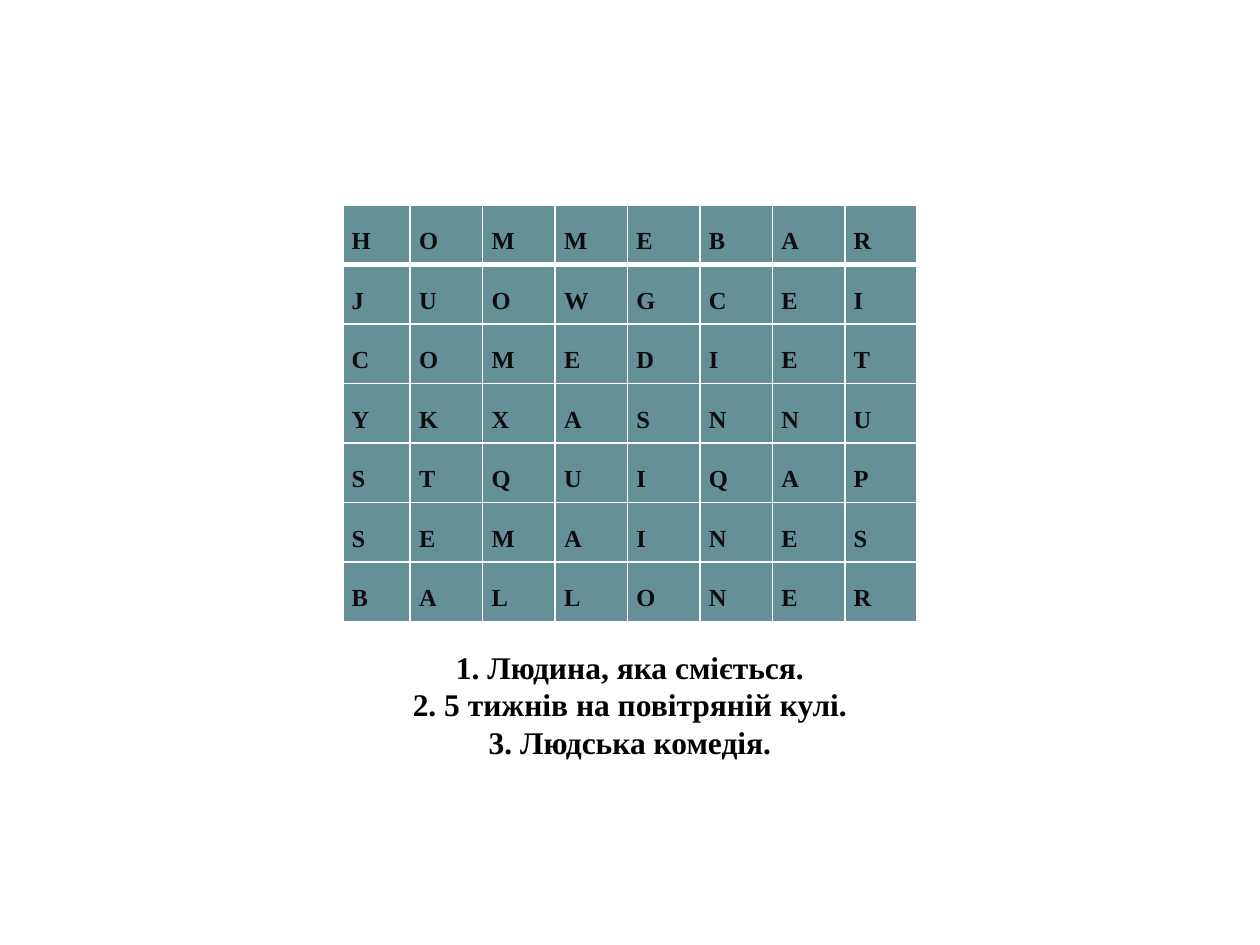
import pptx
import pptx.util
import pptx.dml.color
import pptx.enum.text
from lxml import etree
from pptx.oxml.ns import qn
from pptx.util import Cm

ALIGN = pptx.enum.text.PP_ALIGN
ANCHOR = pptx.enum.text.MSO_ANCHOR
ROWS = ["HOMMEBAR", "JUOWGCEI", "COMEDIET", "YKXASNNU",
        "STQUIQAP", "SEMAINES", "BALLONER"]
CLUES = ["1. Людина, яка сміється.",
         "2. 5 тижнів на повітряній кулі.",
         "3. Людська комедія."]


def color(code):
    return pptx.dml.color.RGBColor.from_string(code)


def write(frame, text, size=18, ink="000000", font="Times New Roman",
          bold=True, align=ALIGN.CENTER, space=1.0):
    """Fill a text frame with one paragraph per line of text."""
    for i, line in enumerate(text.split("\n")):
        para = frame.paragraphs[0] if i == 0 else frame.add_paragraph()
        para.alignment = align
        para.line_spacing = space
        run = para.add_run()
        run.text = line
        run.font.name = font
        run.font.size = pptx.util.Pt(size)
        run.font.bold = bold
        run.font.color.rgb = color(ink)


def edge(cell, side, width, code):
    """Draw one cell border; side is L, R, T or B."""
    props = cell._tc.get_or_add_tcPr()
    line = etree.SubElement(props, qn(f"a:ln{side}"), w=str(pptx.util.Pt(width)))
    fill = etree.SubElement(line, qn("a:solidFill"))
    etree.SubElement(fill, qn("a:srgbClr"), val=code)


class Page:
    tile = "669098"
    rule = "FFFFFF"
    ink = "0D0D0D"

    def __init__(self, deck):
        self.slide = deck.slides.add_slide(deck.slide_layouts[6])

    def grid(self, rows, left, top, first, wide, high):
        """Add a letter table whose first column has its own width."""
        cols = len(rows[0])
        width = first + wide * (cols - 1)
        table = self.slide.shapes.add_table(
            len(rows), cols, Cm(left), Cm(top),
            Cm(width), Cm(high * len(rows))).table
        for i, col in enumerate(table.columns):
            col.width = Cm(wide if i else first)
        for r, word in enumerate(rows):
            table.rows[r].height = Cm(high)
            for c, letter in enumerate(word):
                self.cell(table.cell(r, c), letter, r)

    def cell(self, cell, letter, row):
        cell.margin_left = cell.margin_right = Cm(0.18)
        cell.margin_top = cell.margin_bottom = 0
        cell.vertical_anchor = ANCHOR.MIDDLE
        heavy = {0: "B", 1: "T"}.get(row)
        for side in "LRTB":
            edge(cell, side, 3 if side == heavy else 1, self.rule)
        cell.fill.solid()
        cell.fill.fore_color.rgb = color(self.tile)
        write(cell.text_frame, letter, size=14, ink=self.ink,
              align=ALIGN.JUSTIFY, space=1.5)

    def text(self, text, left, top, width, height, **style):
        box = self.slide.shapes.add_textbox(
            Cm(left), Cm(top), Cm(width), Cm(height))
        box.text_frame.word_wrap = True
        write(box.text_frame, text, **style)


def main():
    deck = pptx.Presentation()
    deck.slide_width, deck.slide_height = Cm(25.4), Cm(19.05)
    page = Page(deck)
    page.grid(ROWS, left=6.91, top=4.13, first=1.36, wide=1.46, high=1.2)
    page.text("\n".join(CLUES), 6.35, 12.93, 12.7, 2.57)
    deck.save("out.pptx")


if __name__ == "__main__":
    main()
